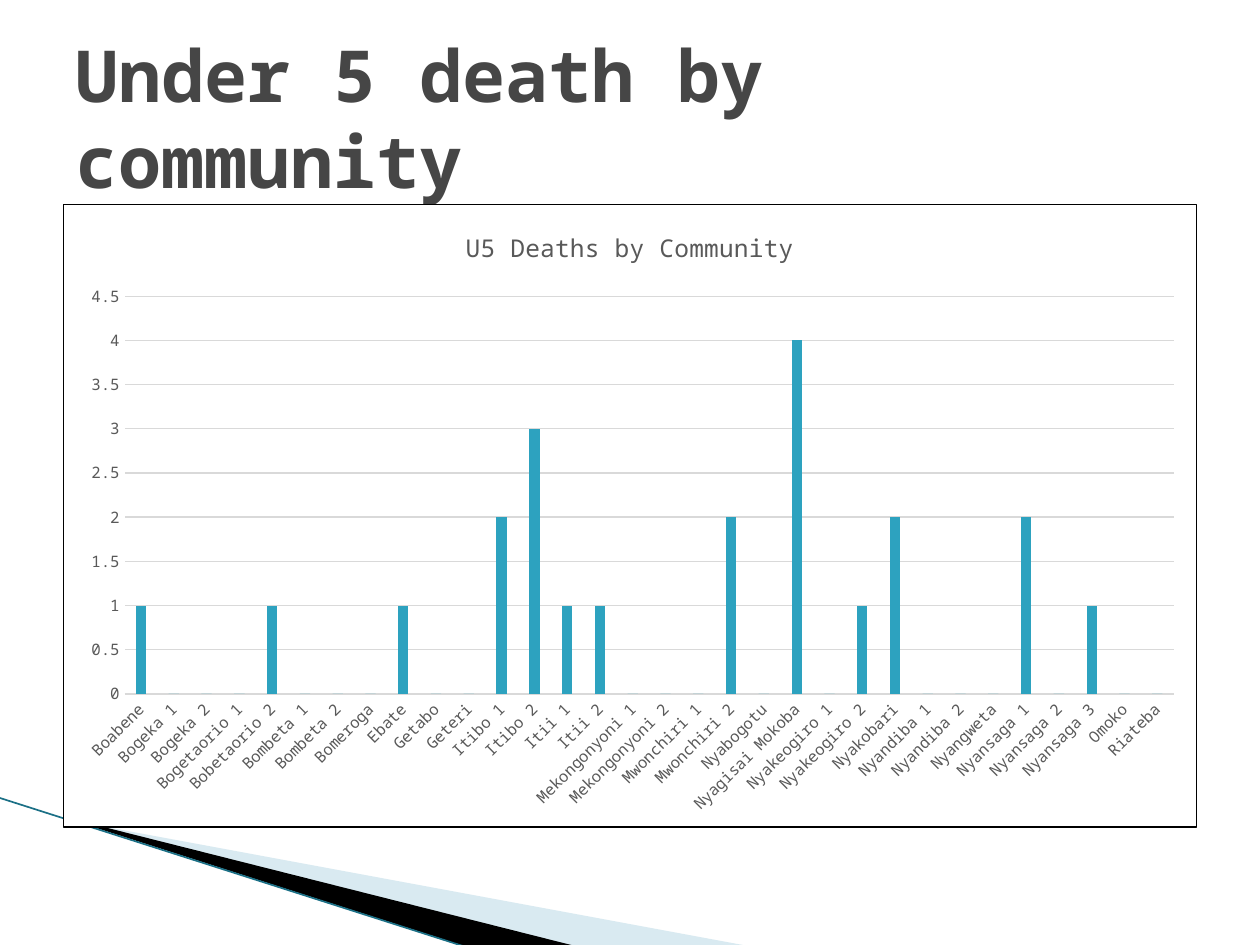
"""Builds a slide charting under-five deaths in each community."""
from lxml import etree
from pptx import Presentation
from pptx.chart.data import CategoryChartData
from pptx.dml.color import RGBColor
from pptx.enum.chart import XL_CHART_TYPE, XL_TICK_MARK
from pptx.enum.shapes import MSO_CONNECTOR
from pptx.enum.text import MSO_ANCHOR
from pptx.oxml import parse_xml
from pptx.oxml.ns import nsdecls, qn
from pptx.util import Pt

COLUMN_CLUSTERED = XL_CHART_TYPE.COLUMN_CLUSTERED
NO_TICK = XL_TICK_MARK.NONE
STRAIGHT = MSO_CONNECTOR.STRAIGHT
MIDDLE = MSO_ANCHOR.MIDDLE

FONT = "Noto Sans Mono"
BLACK = RGBColor(0x00, 0x00, 0x00)
WHITE = RGBColor(0xFF, 0xFF, 0xFF)
TITLE_GRAY = RGBColor(0x46, 0x46, 0x46)
LABEL_GRAY = RGBColor(0x59, 0x59, 0x59)
GRID_GRAY = RGBColor(0xD9, 0xD9, 0xD9)
BAR_TEAL = RGBColor(0x2D, 0xA2, 0xBF)
PALE_BLUE = RGBColor(0xA0, 0xCB, 0xDC)
EDGE_TEAL = RGBColor(0x1B, 0x70, 0x86)

COMMUNITIES = [
    "Boabene", "Bogeka 1", "Bogeka 2", "Bogetaorio 1", "Bobetaorio 2",
    "Bombeta 1", "Bombeta 2", "Bomeroga", "Ebate", "Getabo", "Geteri",
    "Itibo 1", "Itibo 2", "Itii 1", "Itii 2", "Mekongonyoni 1",
    "Mekongonyoni 2", "Mwonchiri 1", "Mwonchiri 2", "Nyabogotu",
    "Nyagisai Mokoba", "Nyakeogiro 1", "Nyakeogiro 2", "Nyakobari",
    "Nyandiba 1", "Nyandiba 2", "Nyangweta", "Nyansaga 1", "Nyansaga 2",
    "Nyansaga 3", "Omoko", "Riateba",
]
DEATHS = {
    "Boabene": 1, "Bobetaorio 2": 1, "Ebate": 1, "Itibo 1": 2, "Itibo 2": 3,
    "Itii 1": 1, "Itii 2": 1, "Mwonchiri 2": 2, "Nyagisai Mokoba": 4,
    "Nyakeogiro 2": 1, "Nyakobari": 2, "Nyansaga 1": 2, "Nyansaga 3": 1,
}


def style_font(font, size, color, bold=False):
    font.name = FONT
    font.size = Pt(size)
    font.bold = bold
    font.color.rgb = color


def style_line(line, color, width=0.75):
    line.color.rgb = color
    line.width = Pt(width)


def add_wedge(slide, points, color, opacity=100):
    start, *others = [(Pt(x), Pt(y)) for x, y in points]
    builder = slide.shapes.build_freeform(*start)
    builder.add_line_segments(others, close=True)
    wedge = builder.convert_to_shape()
    wedge.shadow.inherit = False
    wedge.fill.solid()
    wedge.fill.fore_color.rgb = color
    wedge.line.fill.background()
    if opacity < 100:
        fill_color = wedge.element.spPr.find(qn("a:solidFill"))[0]
        etree.SubElement(fill_color, qn("a:alpha"), val=str(opacity * 1000))


def add_edge(slide, start, end):
    edge = slide.shapes.add_connector(STRAIGHT, *map(Pt, start + end))
    style_line(edge.line, EDGE_TEAL, 0.95)
    etree.SubElement(edge.element.spPr, qn("a:effectLst"))


def add_title(slide, text):
    title = slide.shapes.add_textbox(Pt(36), Pt(21.6), Pt(648), Pt(90))
    frame = title.text_frame
    frame.word_wrap = True
    frame.vertical_anchor = MIDDLE
    frame.text = text
    style_font(frame.paragraphs[0].font, 41, TITLE_GRAY, bold=True)


def style_axes(chart):
    categories, values = chart.category_axis, chart.value_axis
    for axis in (categories, values):
        axis.major_tick_mark = axis.minor_tick_mark = NO_TICK
        style_font(axis.tick_labels.font, 9, LABEL_GRAY)
    style_line(categories.format.line, GRID_GRAY)
    label_body = chart.element.xpath(".//c:catAx/c:txPr/a:bodyPr")[0]
    label_body.set("rot", "-2700000")
    label_body.set("vert", "horz")
    values.minimum_scale, values.maximum_scale, values.major_unit = 0, 4.5, 0.5
    values.format.line.fill.background()
    style_line(values.major_gridlines.format.line, GRID_GRAY)


def frame_chart(chart):
    area = parse_xml(
        f'<c:spPr {nsdecls("c", "a")}>'
        f'<a:solidFill><a:srgbClr val="{WHITE}"/></a:solidFill>'
        f'<a:ln w="{Pt(0.75)}"><a:solidFill><a:srgbClr val="{BLACK}"/>'
        '</a:solidFill></a:ln></c:spPr>'
    )
    chart.element.find(qn("c:chart")).addnext(area)


def add_deaths_chart(slide):
    data = CategoryChartData()
    data.categories = COMMUNITIES
    data.add_series("Series 1", [DEATHS.get(name, 0) for name in COMMUNITIES])
    chart = slide.shapes.add_chart(
        COLUMN_CLUSTERED, Pt(36), Pt(116.64), Pt(648), Pt(356.4), data
    ).chart
    style_font(chart.font, 10, BLACK)
    chart.has_legend = False
    chart.has_title = True
    chart.chart_title.include_in_layout = False
    heading = chart.chart_title.text_frame
    heading.text = "U5 Deaths by Community"
    style_font(heading.paragraphs[0].font, 14, LABEL_GRAY)
    plot = chart.plots[0]
    plot.vary_by_categories = False
    plot.gap_width, plot.overlap = 219, -27
    bars = plot.series[0].format.fill
    bars.solid()
    bars.fore_color.rgb = BAR_TEAL
    style_axes(chart)
    frame_chart(chart)


def main():
    presentation = Presentation()
    presentation.slide_width, presentation.slide_height = Pt(720), Pt(540)
    slide = presentation.slides.add_slide(presentation.slide_layouts[6])
    add_wedge(slide, [(39.6, 468.7), (428.4, 540.7), (328.3, 540.7), (39.6, 468)],
              PALE_BLUE, opacity=40)
    add_wedge(slide, [(38.2, 467.3), (329, 540.7), (267.8, 541.4), (38.9, 468)], BLACK)
    add_edge(slide, (-0.7, 455.8), (267.1, 541.4))
    add_title(slide, "Under 5 death by community")
    add_deaths_chart(slide)
    presentation.save("out.pptx")


if __name__ == "__main__":
    main()
